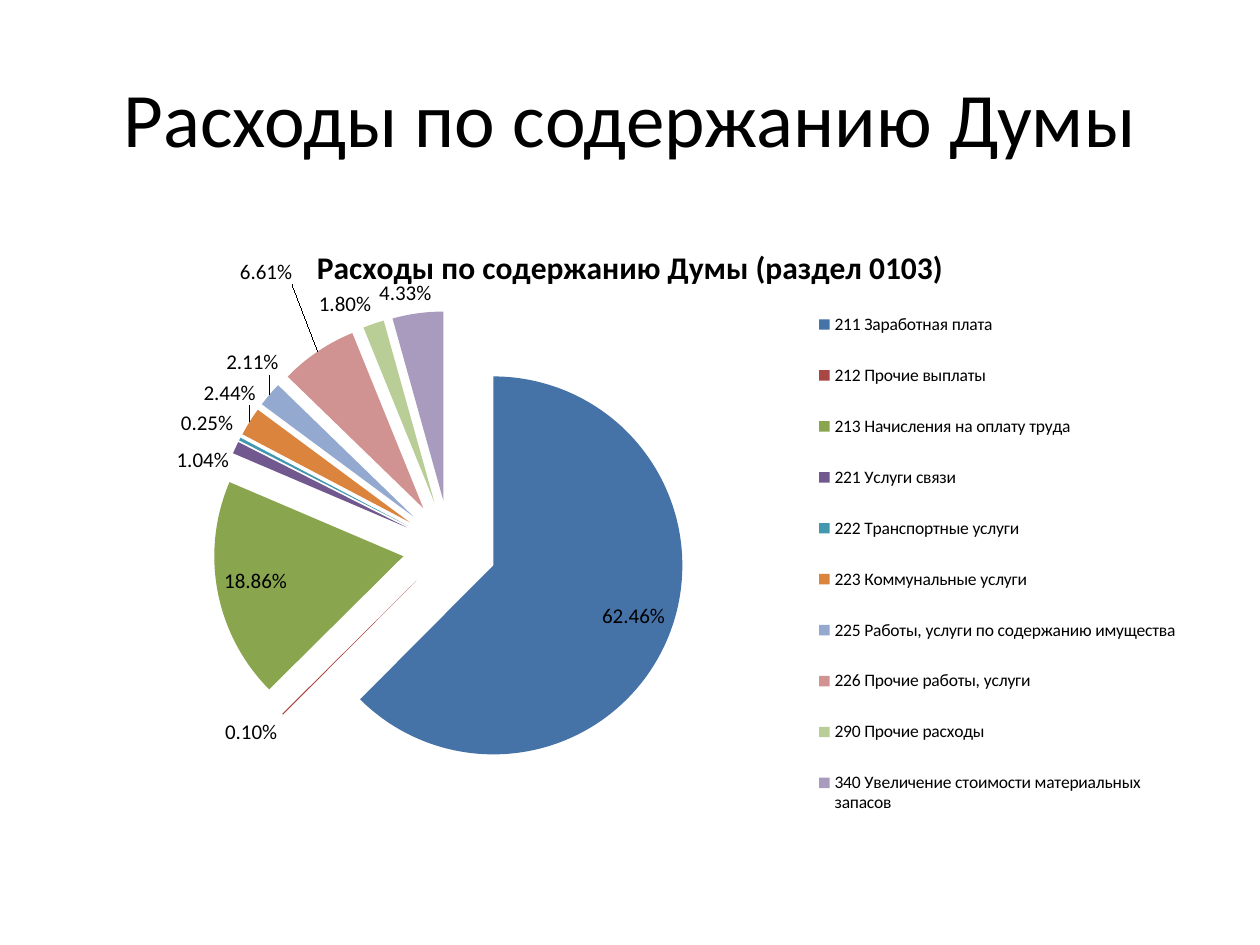
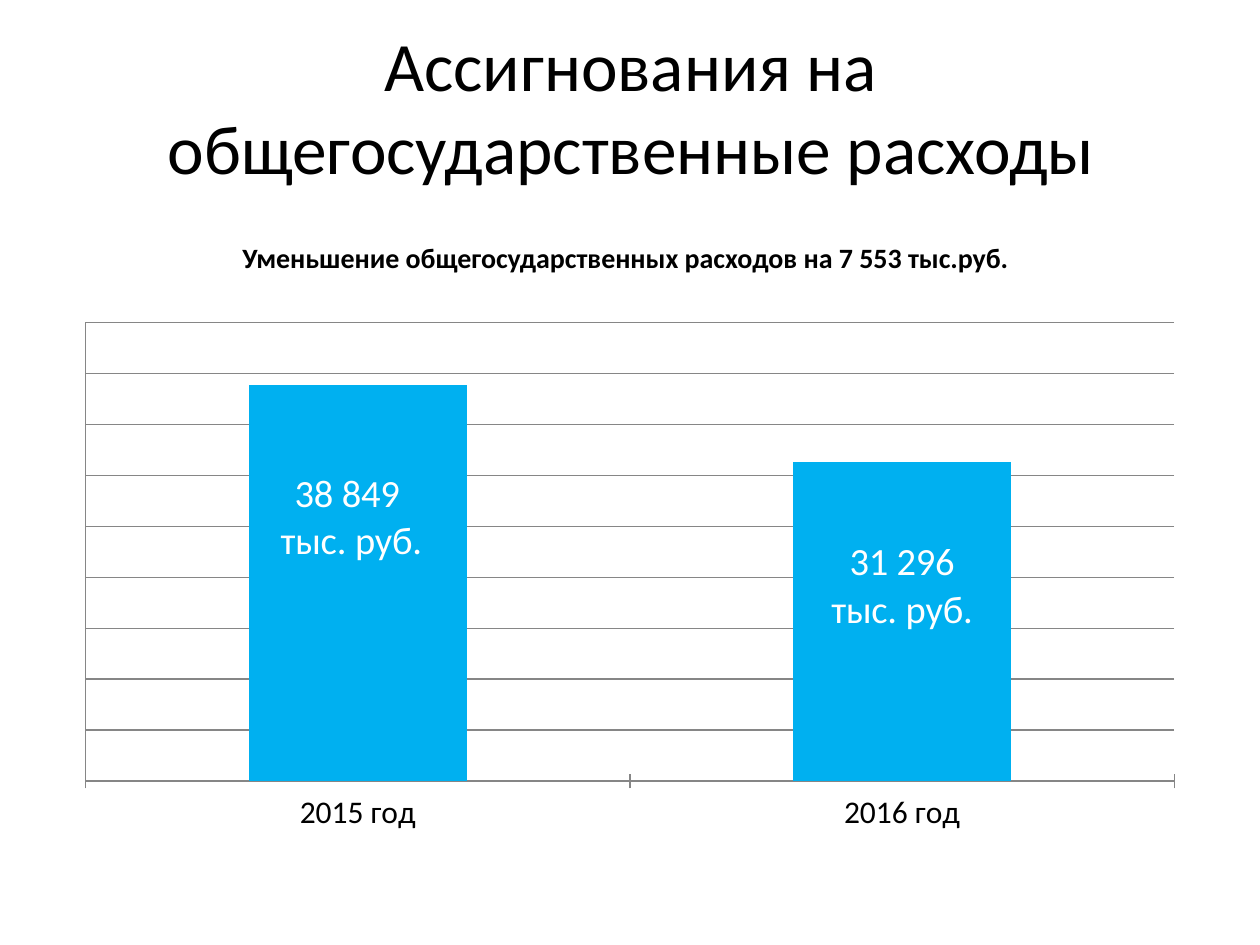
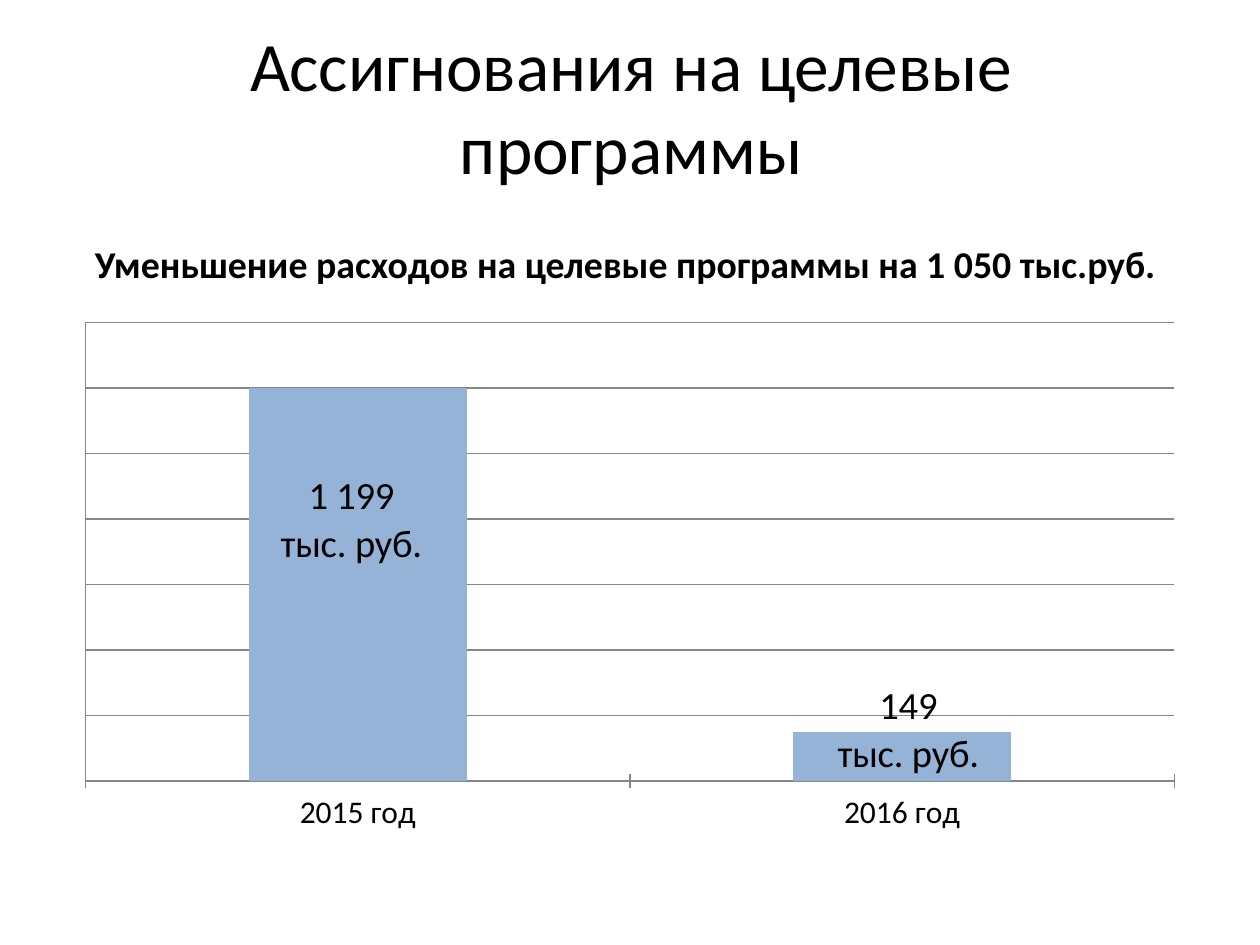
from pptx import Presentation
from pptx import util as u
from pptx.chart.data import CategoryChartData
from pptx.dml.color import RGBColor
from pptx.enum import chart as ch, text
from pptx.oxml import parse_xml
from pptx.oxml.ns import nsdecls, qn

FONT, BLACK, WHITE, GRID = "Calibri", "000000", "FFFFFF", "868686"
CHART_AREA = (0.5, 1.75, 9, 4.95)
TITLE_SIZE = (9, 1.25)

# Content: spending of the Duma
DUMA_TITLE = "Расходы по содержанию Думы"
DUMA_CHART = "Расходы по содержанию Думы (раздел 0103)"
DUMA_SPENDING = [
    ("211 Заработная плата", 62.46, "4572A7"),
    ("212 Прочие выплаты", 0.1, "AA4643"),
    ("213 Начисления на оплату труда", 18.86, "89A54E"),
    ("221 Услуги связи", 1.04, "71588F"),
    ("222 Транспортные услуги", 0.25, "4198AF"),
    ("223 Коммунальные услуги", 2.44, "DB843D"),
    ("225 Работы, услуги по содержанию имущества", 2.11, "93A9CF"),
    ("226 Прочие работы, услуги", 6.61, "D19392"),
    ("290 Прочие расходы", 1.8, "B9CD96"),
    ("340 Увеличение стоимости материальных запасов", 4.33, "A99BBD"),
]
MOVED_SLICE, MOVED_SHIFT = 7, (-0.17, -0.48)
PERCENT = "0.00%"

# Content: yearly allocations; each bar has year, value, label, label shift in inches
ALLOCATIONS = [
    dict(title="Ассигнования на общегосударственные расходы",
         heading="Уменьшение общегосударственных расходов на 7 553 тыс.руб.",
         heading_size=16, heading_height=0.37, color="00B0F0",
         label_color=WHITE, top=45000, step=5000,
         bars=[("2015 год", 38849, "38 849 \nтыс. руб.", (-0.05, -0.52)),
               ("2016 год", 31296, "31 296\nтыс. руб.", (0, -0.28))]),
    dict(title="Ассигнования на целевые программы",
         heading="Уменьшение расходов на целевые программы на 1 050 тыс.руб.",
         heading_size=21.6, heading_height=0.46, color="95B3D7",
         label_color=BLACK, top=1400, step=200,
         bars=[("2015 год", 1199, "1 199\nтыс. руб.", (-0.05, -0.51)),
               ("2016 год", 149, "149\nтыс. руб.", (0.05, -0.21))]),
]


def rgb(color):
    return RGBColor.from_string(color)


def assign(target, **values):
    for name, value in values.items():
        setattr(target, name, value)


def style(font, size, color=BLACK, bold=False):
    assign(font, name=FONT, size=u.Pt(size), bold=bold)
    font.color.rgb = rgb(color)


def place(parent, index, *inches, target=None):
    """Give a chart part a manual layout: x, y and, where set, width and height."""
    for old in parent.findall(qn("c:layout")):
        parent.remove(old)
    parts = f'<c:layoutTarget val="{target}"/>' if target else ""
    if parent.tag != qn("c:dLbl"):
        parts += '<c:xMode val="edge"/><c:yMode val="edge"/>'
    for key, length, whole in zip("xywh", inches, CHART_AREA[2:] * 2):
        parts += f'<c:{key} val="{round(length / whole, 4)}"/>'
    parent.insert(index, parse_xml(
        f'<c:layout {nsdecls("c")}><c:manualLayout>{parts}</c:manualLayout></c:layout>'))


def add_page(deck, title, left, top, size):
    page = deck.slides.add_slide(deck.slide_layouts[5])
    box = page.shapes.title
    box.left, box.top = u.Inches(left), u.Inches(top)
    box.width, box.height = map(u.Inches, TITLE_SIZE)
    box.text_frame.text = title
    para = box.text_frame.paragraphs[0]
    para.alignment = text.PP_ALIGN.CENTER
    style(para.runs[0].font, size)
    return page


def add_chart(page, kind, name, rows, size, plot_area):
    data = CategoryChartData()
    data.categories = [row[0] for row in rows]
    data.add_series(name, [row[1] for row in rows])
    chart = page.shapes.add_chart(kind, *map(u.Inches, CHART_AREA), data).chart
    style(chart.font, size)
    place(chart.element.xpath("//c:plotArea")[0], 0, *plot_area, target="inner")
    return chart


def add_duma_page(deck):
    page = add_page(deck, DUMA_TITLE, 0.5, 0.3, 44)
    chart = add_chart(page, ch.XL_CHART_TYPE.PIE, DUMA_CHART, DUMA_SPENDING, 10,
                      (0.53, 0.72, 5.08, 3.75))

    # Chart title and legend
    chart.has_title = True
    chart.chart_title.text_frame.text = DUMA_CHART
    style(chart.chart_title.text_frame.paragraphs[0].runs[0].font, 18, bold=True)
    place(chart.element.xpath("//c:title")[0], 1, 1.97, 0.15)
    chart.has_legend = True
    chart.legend.position = ch.XL_LEGEND_POSITION.RIGHT
    chart.legend.include_in_layout = False
    style(chart.legend.font, 10)
    place(chart.element.xpath("//c:legend")[0], 1, 5.93, 0.5, 2.97, 4.45)

    # Slices
    plot = chart.plots[0]
    plot.vary_by_categories = True
    series = plot.series[0]
    chart.element.xpath("//c:ser/c:tx")[0].addnext(
        parse_xml(f'<c:explosion {nsdecls("c")} val="25"/>'))
    for index, (_, _, color) in enumerate(DUMA_SPENDING):
        fill = series.points[index].format.fill
        fill.solid()
        fill.fore_color.rgb = rgb(color)

    # Percentages, one of them moved off its slice
    best_fit = ch.XL_LABEL_POSITION.BEST_FIT
    assign(series.data_labels, show_value=False, show_percentage=True,
           number_format=PERCENT, number_format_is_linked=False, position=best_fit)
    style(series.data_labels.font, 12)
    label = series.points[MOVED_SLICE].data_label
    style(label.font, 12)
    label.position = best_fit
    label_xml = chart.element.xpath("//c:dLbl")[0]
    label_xml.find(qn("c:showVal")).set("val", "0")
    label_xml.find(qn("c:showPercent")).set("val", "1")
    place(label_xml, 1, *MOVED_SHIFT)
    label_xml.insert(2, parse_xml(
        f'<c:numFmt {nsdecls("c")} formatCode="{PERCENT}" sourceLinked="0"/>'))


def add_allocation_page(deck, item):
    page = add_page(deck, item["title"], 0.51, 0.21, 39.6)
    chart = add_chart(page, ch.XL_CHART_TYPE.COLUMN_CLUSTERED, "Series 1",
                      item["bars"], 18, (0.18, 0.81, 8.64, 3.64))
    chart.has_title = chart.has_legend = False

    # Axes
    years, amounts = chart.category_axis, chart.value_axis
    years.major_tick_mark = ch.XL_TICK_MARK.CROSS
    assign(amounts, minimum_scale=0, maximum_scale=item["top"],
           major_unit=item["step"], has_major_gridlines=True,
           major_tick_mark=ch.XL_TICK_MARK.NONE,
           tick_label_position=ch.XL_TICK_LABEL_POSITION.NONE)
    for part in (years, amounts, amounts.major_gridlines):
        part.format.line.color.rgb = rgb(GRID)
        part.format.line.width = u.Pt(0.75)

    # Bars and their labels
    plot = chart.plots[0]
    plot.gap_width = 150
    plot.vary_by_categories = False
    series = plot.series[0]
    series.format.fill.solid()
    series.format.fill.fore_color.rgb = rgb(item["color"])
    center = ch.XL_LABEL_POSITION.CENTER
    assign(series.data_labels, show_value=True, number_format="#,##0",
           number_format_is_linked=False, position=center)
    style(series.data_labels.font, 22, item["label_color"])
    for index, (_, _, caption, _) in enumerate(item["bars"]):
        label = series.points[index].data_label
        label.text_frame.text = caption
        label.position = center
        for para in label.text_frame.paragraphs:
            style(para.runs[0].font, 22, item["label_color"])
    for label_xml, bar in zip(chart.element.xpath("//c:dLbl"), item["bars"]):
        place(label_xml, 1, *bar[3])
    for leader in chart.element.xpath("//c:showLeaderLines"):
        leader.set("val", "0")

    # Heading over the chart
    box = page.shapes.add_textbox(*map(u.Inches, (0.2, 1.86, 9.53, item["heading_height"])))
    box.text_frame.word_wrap = True
    box.text_frame.text = item["heading"]
    para = box.text_frame.paragraphs[0]
    para.alignment = text.PP_ALIGN.CENTER
    style(para.runs[0].font, item["heading_size"], bold=True)


def main():
    deck = Presentation()
    deck.slide_width, deck.slide_height = u.Inches(10), u.Inches(7.5)
    add_duma_page(deck)
    for item in ALLOCATIONS:
        add_allocation_page(deck, item)
    deck.save("out.pptx")


if __name__ == "__main__":
    main()
